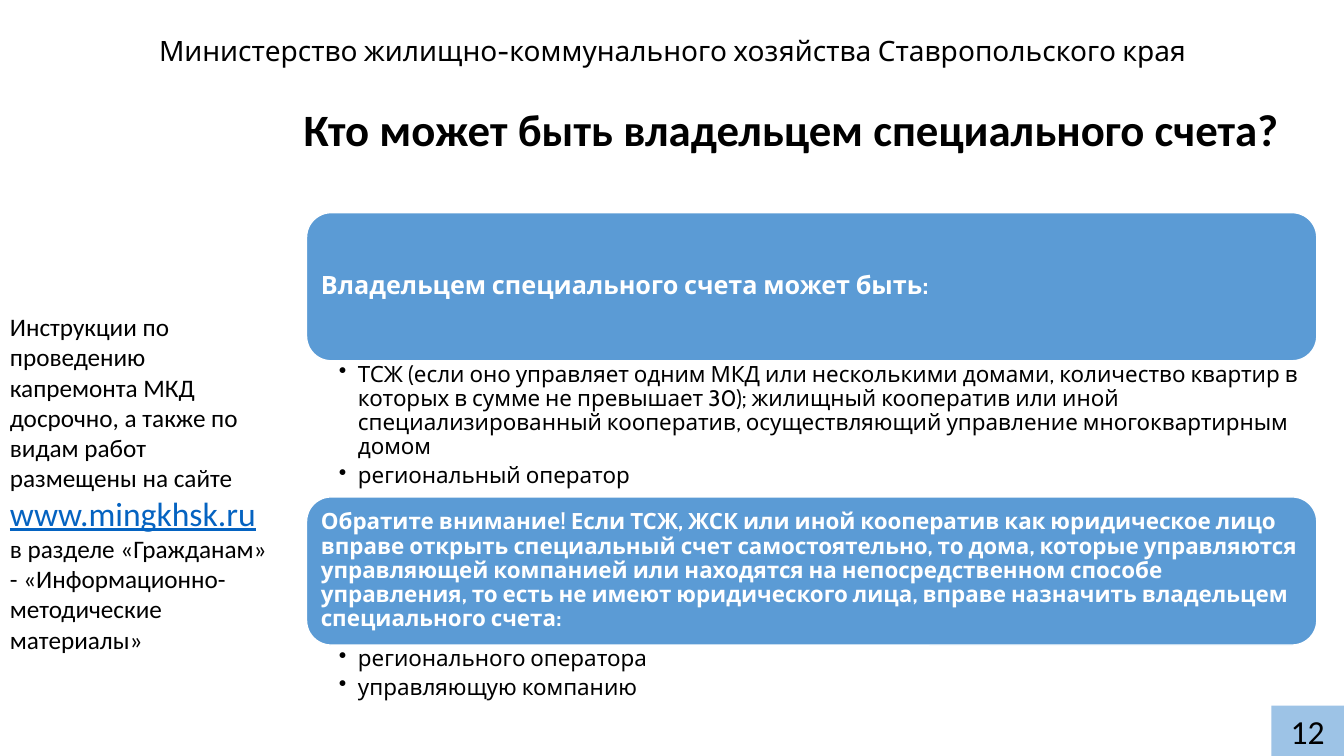
from lxml import etree
from pptx import Presentation, util as u
from pptx.dml.color import RGBColor
from pptx.enum import shapes, text
from pptx.oxml.ns import qn

# Content
MINISTRY = "Министерство жилищно-коммунального хозяйства Ставропольского края"
QUESTION = "Кто может быть владельцем специального счета?"
GUIDE = [
    ("Инструкции по проведению капремонта МКД досрочно, а также по видам работ "
     "размещены на сайте ", "plain"),
    ("www.mingkhsk.ru", "site"),
    (" в разделе «Гражданам» - «Информационно-методические материалы»", "plain"),
]
PAGE = "12"
# Each section: heading, heading size name, owners, height of the owners' list
SECTIONS = [
    ("Владельцем специального счета может быть:", "heading",
     ["ТСЖ (если оно управляет одним МКД или несколькими домами, количество "
      "квартир в которых в сумме не превышает 30); жилищный кооператив или иной "
      "специализированный кооператив, осуществляющий управление "
      "многоквартирным домом",
      "региональный оператор"], 1.35),
    ("Обратите внимание! Если ТСЖ, ЖСК или иной кооператив как юридическое лицо "
     "вправе открыть специальный счет самостоятельно, то дома, которые "
     "управляются управляющей компанией или находятся на непосредственном "
     "способе управления, то есть не имеют юридического лица, вправе назначить "
     "владельцем специального счета:", "body",
     ["регионального оператора", "управляющую компанию"], 0.59),
]


class Theme:
    display, plain = "Cabin", "Calibri"
    ink, white = RGBColor(0, 0, 0), RGBColor(255, 255, 255)
    banner, corner = RGBColor(0x5B, 0x9B, 0xD5), RGBColor(0x9D, 0xC3, 0xE6)
    site = RGBColor(0x05, 0x63, 0xC1)
    size = {"title": 32, "site": 24, "page": 24, "ministry": 20,
            "heading": 18, "plain": 18, "body": 16}


# Grid, in inches
WIDTH, HEIGHT = 13.33, 7.5
STACK_LEFT, STACK_TOP, STACK_WIDTH = 3.04, 2.11, 10.02
BANNER_HEIGHT = 1.47
PAGE_WIDTH, PAGE_HEIGHT = 0.72, 0.5
HANG = 0.19


def box(*inches):
    return [u.Inches(value) for value in inches]


def style(run, size, face, colour=Theme.ink, bold=False):
    run.font.size = u.Pt(Theme.size[size])
    run.font.name = face
    run.font.color.rgb = colour
    run.font.bold = bold


def set_frame(frame, anchor=text.MSO_ANCHOR.TOP, insets=(0.1, 0.05, 0.1, 0.05)):
    frame.word_wrap = True
    frame.vertical_anchor = anchor
    (frame.margin_left, frame.margin_top,
     frame.margin_right, frame.margin_bottom) = box(*insets)


def fill_line(frame, words, size, face, colour=Theme.ink, bold=False,
              align=text.PP_ALIGN.LEFT, after=0, spacing=0.9):
    frame.text = words
    line = frame.paragraphs[0]
    line.alignment = align
    line.line_spacing = spacing
    line.space_before, line.space_after = u.Pt(0), u.Pt(after)
    style(line.runs[0], size, face, colour, bold)


def add_panel(kind, place, colour):
    panel = slide.shapes.add_shape(kind, *box(*place))
    panel.shadow.inherit = False
    panel.fill.solid()
    panel.fill.fore_color.rgb = colour
    return panel


def add_owners(place, owners):
    frame = slide.shapes.add_textbox(*box(*place)).text_frame
    set_frame(frame, insets=(0.32, 0.02, 0.12, 0.02))
    frame.text = "\n".join(owners)
    for owner in frame.paragraphs:
        owner.level = 1
        owner.line_spacing, owner.space_after = 0.9, u.Pt(3.2)
        props = owner._p.get_or_add_pPr()
        props.set("marL", str(u.Inches(HANG)))
        props.set("indent", str(-u.Inches(HANG)))
        etree.SubElement(props, qn("a:buChar")).set("char", "•")
        style(owner.runs[0], "body", Theme.display)


deck = Presentation()
deck.slide_width, deck.slide_height = box(WIDTH, HEIGHT)
slide = deck.slides.add_slide(deck.slide_layouts[5])

# Title
title = slide.shapes.title
title.left, title.top, title.width, title.height = box(2.65, 1.02, 10.4, 0.59)
set_frame(title.text_frame)
title.text_frame.auto_size = text.MSO_AUTO_SIZE.NONE
fill_line(title.text_frame, QUESTION, "title", Theme.plain, bold=True,
          align=text.PP_ALIGN.CENTER)

# Ministry line
ministry = slide.shapes.add_textbox(*box(0.92, 0.3, 11.5, 0.44)).text_frame
set_frame(ministry, text.MSO_ANCHOR.MIDDLE)
fill_line(ministry, MINISTRY, "ministry", Theme.display,
          align=text.PP_ALIGN.CENTER)

# Banners, each with its list of owners below
top = STACK_TOP
for heading, size, owners, list_height in SECTIONS:
    banner = add_panel(shapes.MSO_SHAPE.ROUNDED_RECTANGLE,
                       (STACK_LEFT, top, STACK_WIDTH, BANNER_HEIGHT), Theme.banner)
    banner.line.color.rgb = Theme.white
    banner.line.width = u.Pt(1)
    set_frame(banner.text_frame, text.MSO_ANCHOR.MIDDLE, (0.07,) * 4)
    fill_line(banner.text_frame, heading, size, Theme.display, Theme.white,
              bold=True, after=0.35 * Theme.size[size])
    top += BANNER_HEIGHT
    add_owners((STACK_LEFT, top, STACK_WIDTH, list_height), owners)
    top += list_height

# Guide to the website
guide = slide.shapes.add_textbox(*box(0, 3.04, 2.79, 3.53)).text_frame
set_frame(guide)
for words, role in GUIDE:
    part = guide.paragraphs[0].add_run()
    part.text = words
    style(part, role, Theme.plain, Theme.site if role == "site" else Theme.ink)
    part.font.underline = role == "site"

# Page number
page = add_panel(shapes.MSO_SHAPE.RECTANGLE,
                 (WIDTH - PAGE_WIDTH, HEIGHT - PAGE_HEIGHT, PAGE_WIDTH, PAGE_HEIGHT),
                 Theme.corner)
page.line.fill.background()
set_frame(page.text_frame)
fill_line(page.text_frame, PAGE, "page", Theme.plain,
          align=text.PP_ALIGN.CENTER, spacing=1.0)

deck.save("out.pptx")
